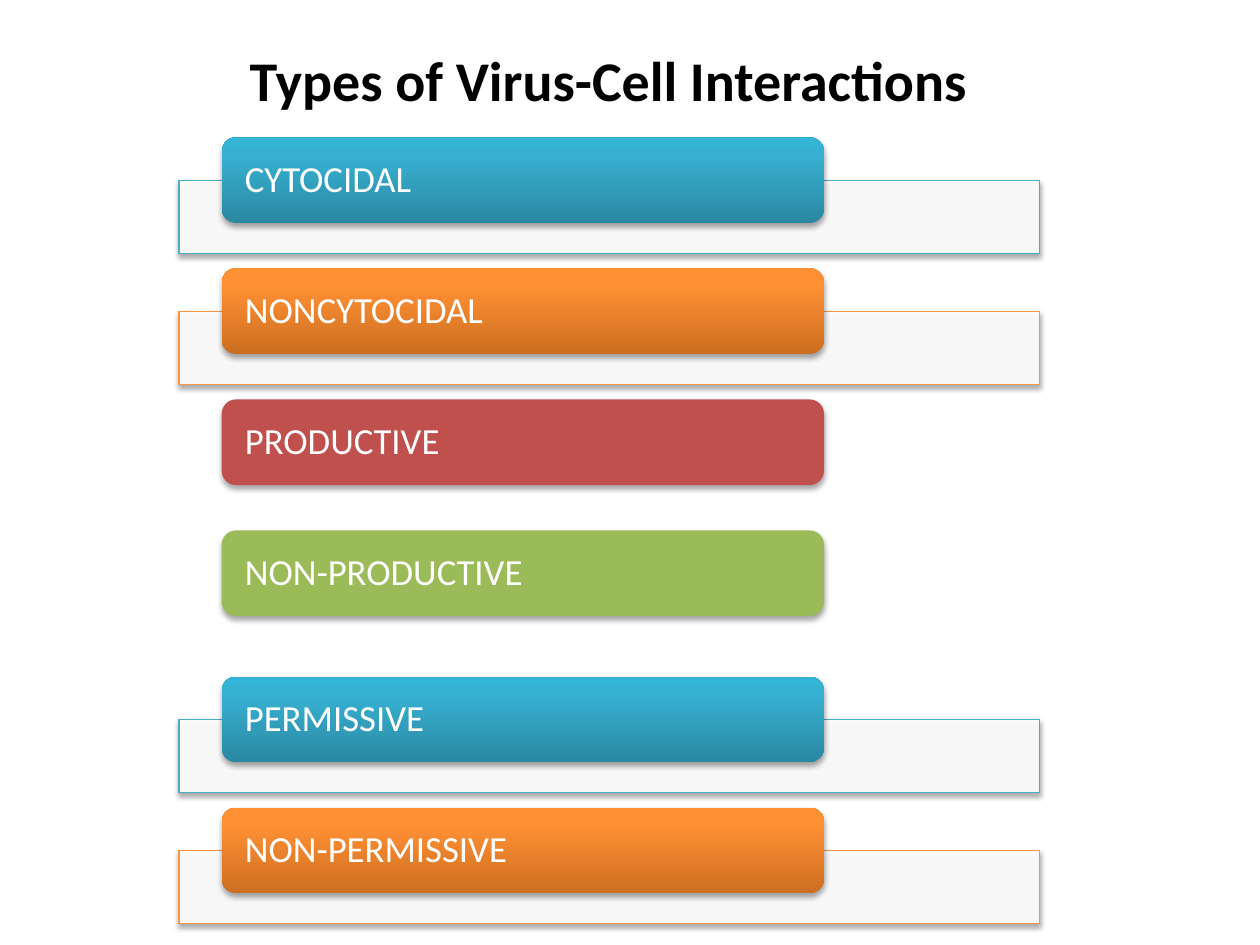
from lxml.etree import SubElement as Sub
from pptx import Presentation
from pptx.dml.color import RGBColor as Rgb
from pptx.enum.shapes import MSO_SHAPE as Kind
from pptx.enum.text import MSO_ANCHOR as Anchor, PP_ALIGN as Align
from pptx.oxml.ns import qn
from pptx.util import Inches, Pt

# Content: label, colour, whether a tray lies behind the pill; one list per block
TITLE = "Types of Virus-Cell Interactions"
BLOCKS = [
    [("CYTOCIDAL", "teal", True), ("NONCYTOCIDAL", "orange", True)],
    [("PRODUCTIVE", "red", False), ("NON-PRODUCTIVE", "green", False)],
    [("PERMISSIVE", "teal", True), ("NON-PERMISSIVE", "orange", True)],
]
COLORS = {"teal": "4BACC6", "orange": "F79646", "red": "C0504D",
          "green": "9BBB59", "white": "FFFFFF", "black": "000000"}
FADES = {"teal": [(0, "2A88A2"), (80, "37B1D2"), (100, "34B4D6")],
         "orange": [(0, "CC6E20"), (80, "FF9034"), (100, "FF9136")]}

# Layout in inches
WIDE, HIGH = 10, 7.5
TOP, PITCH = 1.09, 1.04
GAPS = [0, 0, 0.12]            # extra space above each block
PILL = (1.76, 4.78, 0.68)      # left, width, height
TRAY = (1.42, 6.83, 0.58)
DROP = PILL[2] / 2             # trays start at the pill's middle

TITLE_FONT = {"name": "Calibri", "size": Pt(32), "bold": True}
PILL_FONT = {"name": "Calibri", "size": Pt(21), "bold": False}


def color(name):
    return Rgb.from_string(COLORS[name])


def write(shape, text, font, ink, align, **frame):
    box = shape.text_frame
    style = {"word_wrap": True, "vertical_anchor": Anchor.MIDDLE, **frame}
    for key, val in style.items():
        setattr(box, key, val)
    para = box.paragraphs[0]
    para.alignment = align
    run = para.add_run()
    run.text = text
    for key, val in font.items():
        setattr(run.font, key, val)
    run.font.color.rgb = color(ink)
    return para


def shade(shape):
    """Soft shadow straight below the shape."""
    shape.shadow.inherit = False
    fx = shape._element.spPr.find(qn("a:effectLst"))
    drop = Sub(fx, qn("a:outerShdw"), blurRad=str(Pt(3.1)), dist=str(Pt(1.8)),
               dir="5400000", rotWithShape="0")
    tint = Sub(drop, qn("a:srgbClr"), val=COLORS["black"])
    Sub(tint, qn("a:alpha"), val="35000")


def fade(shape, stops):
    """Swap the solid fill for an upward gradient."""
    props = shape._element.spPr
    old = props.find(qn("a:solidFill"))
    grad = Sub(props, qn("a:gradFill"), rotWithShape="1")
    props.replace(old, grad)
    row = Sub(grad, qn("a:gsLst"))
    for pos, tone in stops:
        stop = Sub(row, qn("a:gs"), pos=str(pos * 1000))
        Sub(stop, qn("a:srgbClr"), val=tone)
    Sub(grad, qn("a:lin"), ang="16200000", scaled="0")


def block(slide, kind, dims, top, fill):
    left, width, height = dims
    shape = slide.shapes.add_shape(
        kind, Inches(left), Inches(top), Inches(width), Inches(height))
    shape.fill.solid()
    shape.fill.fore_color.rgb = color(fill)
    shape.line.fill.background()
    shade(shape)
    return shape


def add_tray(slide, top, edge):
    tray = block(slide, Kind.RECTANGLE, TRAY, top, "white")
    tray.line.color.rgb = color(edge)
    tray.line.width = Pt(0.75)
    tint = tray._element.spPr.find(qn("a:solidFill"))[0]
    Sub(tint, qn("a:alpha"), val="90000")


def add_pill(slide, top, label, hue):
    pill = block(slide, Kind.ROUNDED_RECTANGLE, PILL, top, hue)
    if hue in FADES:
        fade(pill, FADES[hue])
    para = write(pill, label, PILL_FONT, "white", Align.LEFT,
                 margin_left=Inches(0.15), margin_right=Inches(0.15),
                 margin_top=0, margin_bottom=0)
    para.line_spacing = 0.9


def main():
    deck = Presentation()
    deck.slide_width, deck.slide_height = Inches(WIDE), Inches(HIGH)
    slide = deck.slides.add_slide(deck.slide_layouts[6])

    # Title
    head = slide.shapes.add_textbox(
        Inches(-0.92), 0, Inches(11.5), Inches(HIGH / 6))
    write(head, TITLE, TITLE_FONT, "black", Align.CENTER)

    # Rows of pills, some over a tray
    top = TOP
    for gap, rows in zip(GAPS, BLOCKS):
        top += gap
        for label, hue, tray in rows:
            if tray:
                add_tray(slide, top + DROP, hue)
            add_pill(slide, top, label, hue)
            top += PITCH

    deck.save("out.pptx")


if __name__ == "__main__":
    main()
